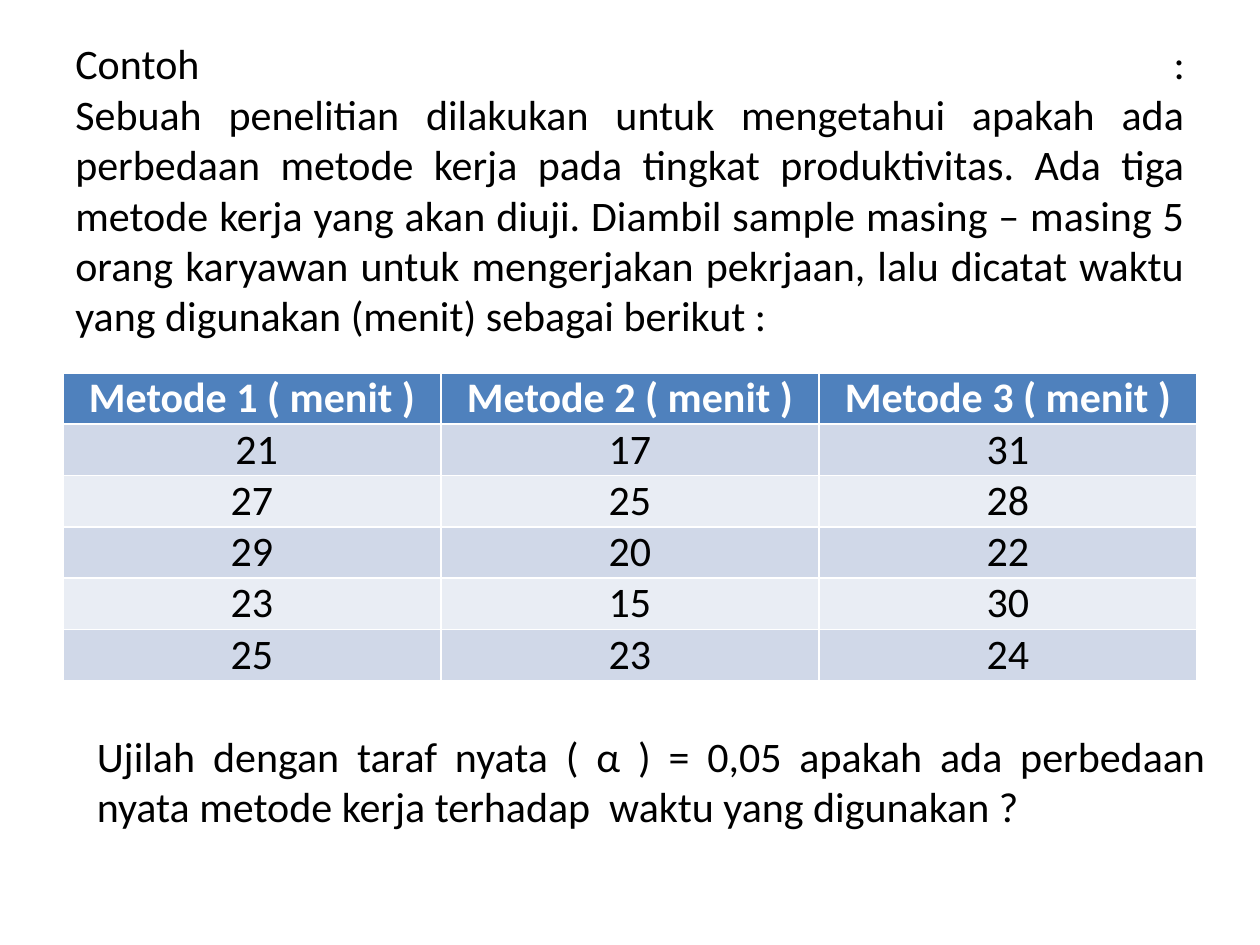
from dataclasses import dataclass

from pptx import Presentation
from pptx.dml.color import RGBColor
from pptx.enum.text import MSO_ANCHOR, PP_ALIGN
from pptx.util import Inches, Pt

MIDDLE = MSO_ANCHOR.MIDDLE
CENTER = PP_ALIGN.CENTER
JUSTIFY = PP_ALIGN.JUSTIFY

COLORS = {
    "text": "000000",
    "head": "4F81BD",
    "head_text": "FFFFFF",
    "odd": "D0D8E8",
    "even": "E9EDF4",
}
WIDTH = 9
ROW = 0.405


@dataclass
class Block:
    left: float
    top: float
    height: float
    text: str


BLOCKS = [
    Block(0.5, 0.21, 2.58,
          "Contoh :\vSebuah penelitian dilakukan untuk mengetahui apakah ada "
          "perbedaan metode kerja pada tingkat produktivitas. Ada tiga metode "
          "kerja yang akan diuji. Diambil sample masing – masing 5 orang "
          "karyawan untuk mengerjakan pekrjaan, lalu dicatat waktu yang "
          "digunakan (menit) sebagai berikut :"),
    Block(0.67, 5.57, 1.25,
          "Ujilah dengan taraf nyata ( α ) = 0,05 apakah ada perbedaan nyata "
          "metode kerja terhadap  waktu yang digunakan ?"),
]
ROWS = [
    [f"Metode {n} ( menit )" for n in (1, 2, 3)],
    [" 21", "17", "31"],
    ["27", "25", "28"],
    ["29", "20", "22"],
    ["23", "15", "30"],
    ["25", "23", "24"],
]


def write(frame, text: str, align, color: str, bold: bool = False) -> None:
    """Put one styled paragraph into a text frame."""
    para = frame.paragraphs[0]
    para.text = text
    para.alignment = align
    para.font.name = "Calibri"
    para.font.size = Pt(24)
    para.font.bold = bold
    para.font.color.rgb = RGBColor.from_string(COLORS[color])


def draw_block(slide, block: Block) -> None:
    """Draw a justified text block."""
    box = slide.shapes.add_textbox(
        Inches(block.left), Inches(block.top), Inches(WIDTH), Inches(block.height))
    frame = box.text_frame
    frame.word_wrap = True
    frame.vertical_anchor = MIDDLE
    write(frame, block.text, JUSTIFY, "text")


def draw_table(slide, rows: list[list[str]]) -> None:
    """Draw the table of working times."""
    table = slide.shapes.add_table(
        len(rows), len(rows[0]), Inches(0.5), Inches(2.96),
        Inches(WIDTH), Inches(ROW * len(rows))).table
    for r, row in enumerate(rows):
        head = r == 0
        fill = "head" if head else "odd" if r % 2 else "even"
        for c, text in enumerate(row):
            cell = table.cell(r, c)
            cell.margin_left = cell.margin_right = Inches(0.07)
            cell.margin_top = cell.margin_bottom = Inches(0)
            cell.fill.solid()
            cell.fill.fore_color.rgb = RGBColor.from_string(COLORS[fill])
            write(cell.text_frame, text, CENTER,
                  "head_text" if head else "text", head)


def main() -> None:
    """Build and save the slide."""
    deck = Presentation()
    deck.slide_width = Inches(10)
    deck.slide_height = Inches(7.5)
    slide = deck.slides.add_slide(deck.slide_layouts[6])
    draw_table(slide, ROWS)
    for block in BLOCKS:
        draw_block(slide, block)
    deck.save("out.pptx")


if __name__ == "__main__":
    main()
